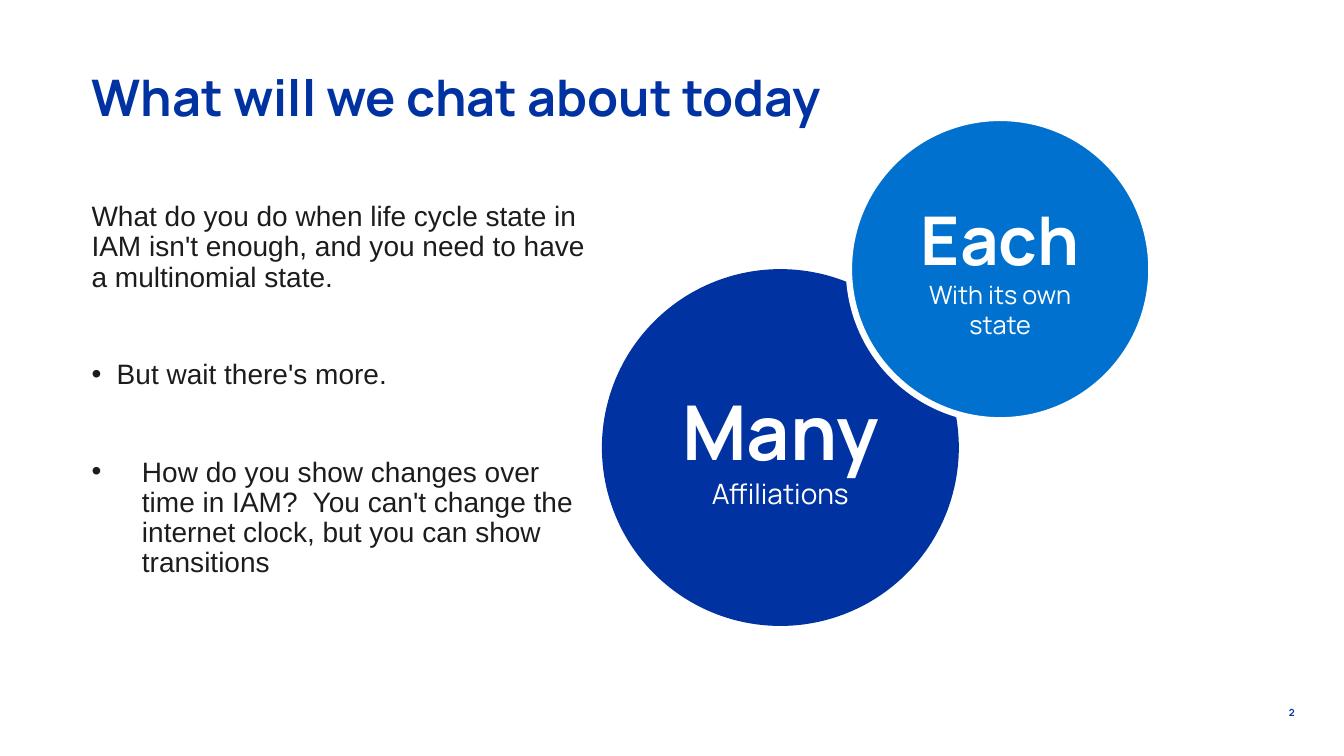
from lxml import etree
from pptx import Presentation
from pptx import util as u
from pptx.dml.color import RGBColor
from pptx.enum import shapes, text
from pptx.oxml import ns

NAVY = RGBColor(0x00, 0x33, 0xA1)
BLUE = RGBColor(0x00, 0x71, 0xCE)
INK = RGBColor(0x1D, 0x1C, 0x1D)
WHITE = RGBColor(0xFF, 0xFF, 0xFF)

deck = Presentation()
deck.slide_width, deck.slide_height = u.Inches(13.33), u.Inches(7.5)
CELL = deck.slide_height / 90  # square grid, 160 columns by 90 rows
MARGIN = 9.72


def grid(*cells):
    return [u.Emu(round(cell * CELL)) for cell in cells]


def add_span(para, words, size, color, font="Manrope", bold=False):
    span = para.add_run()
    span.text = words
    span.font.name, span.font.size, span.font.bold = font, u.Pt(size), bold
    span.font.color.rgb = color


page = deck.slides.add_slide(deck.slide_layouts[5])

# Title
title = page.shapes.title
title.left, title.top, title.width, title.height = grid(MARGIN, 6.12, 100, 10.8)
title.text_frame.vertical_anchor = text.MSO_ANCHOR.MIDDLE
title.text_frame.auto_size = text.MSO_AUTO_SIZE.NONE
para = title.text_frame.paragraphs[0]
para.alignment = text.PP_ALIGN.LEFT
add_span(para, "What will we chat about today", 36, NAVY, bold=True)

# Talking points: words and hanging indent in inches
points = [
    ("What do you do when life cycle state in IAM isn't enough, "
     "and you need to have a multinomial state.", 0),
    ("But wait there's more.", 0.25),
    ("How do you show changes over time in IAM?  You can't change the "
     "internet clock, but you can show transitions", 0.5),
]
body = page.shapes.add_textbox(*grid(MARGIN, 23.52, 62.04, 46.32)).text_frame
body.word_wrap = True
for number, (words, indent) in enumerate(points):
    para = body.add_paragraph() if number else body.paragraphs[0]
    para.line_spacing = 0.9
    if indent:
        para.space_before = u.Pt(48)
        props = para._p.get_or_add_pPr()
        props.set("marL", str(u.Inches(indent)))
        props.set("indent", str(-u.Inches(indent)))
        font = etree.SubElement(props, ns.qn("a:buFont"))
        font.set("typeface", "Arial")
        bullet = etree.SubElement(props, ns.qn("a:buChar"))
        bullet.set("char", "•")
    add_span(para, words, 20, INK, "Arial")

# Overlapping circles: left, top, diameter, fill, then headline and caption
circles = [
    (71.64, 32.04, 42.48, NAVY, "Many", 54, "Affiliations", 20),
    (101.04, 14.04, 36, BLUE, "Each", 48, "With its own state", 18),
]
for left, top, size, fill, headline, big, caption, small in circles:
    circle = page.shapes.add_shape(
        shapes.MSO_SHAPE.OVAL, *grid(left, top, size, size))
    circle.shadow.inherit = False
    circle.fill.solid()
    circle.fill.fore_color.rgb = fill
    if fill == BLUE:
        circle.line.color.rgb = WHITE
        circle.line.width = u.Pt(4.5)
    else:
        circle.line.fill.background()
    frame = circle.text_frame
    frame.word_wrap = True
    frame.vertical_anchor = text.MSO_ANCHOR.MIDDLE
    lines = [(frame.paragraphs[0], headline, big, True),
             (frame.add_paragraph(), caption, small, False)]
    for para, words, points_size, bold in lines:
        para.alignment = text.PP_ALIGN.CENTER
        add_span(para, words, points_size, WHITE, bold=bold)

# Page number
frame = page.shapes.add_textbox(*grid(144.84, 83.28, 10.44, 3)).text_frame
frame.word_wrap = True
frame.vertical_anchor = text.MSO_ANCHOR.MIDDLE
frame.paragraphs[0].alignment = text.PP_ALIGN.RIGHT
add_span(frame.paragraphs[0], "2", 7, NAVY, bold=True)

deck.save("out.pptx")
